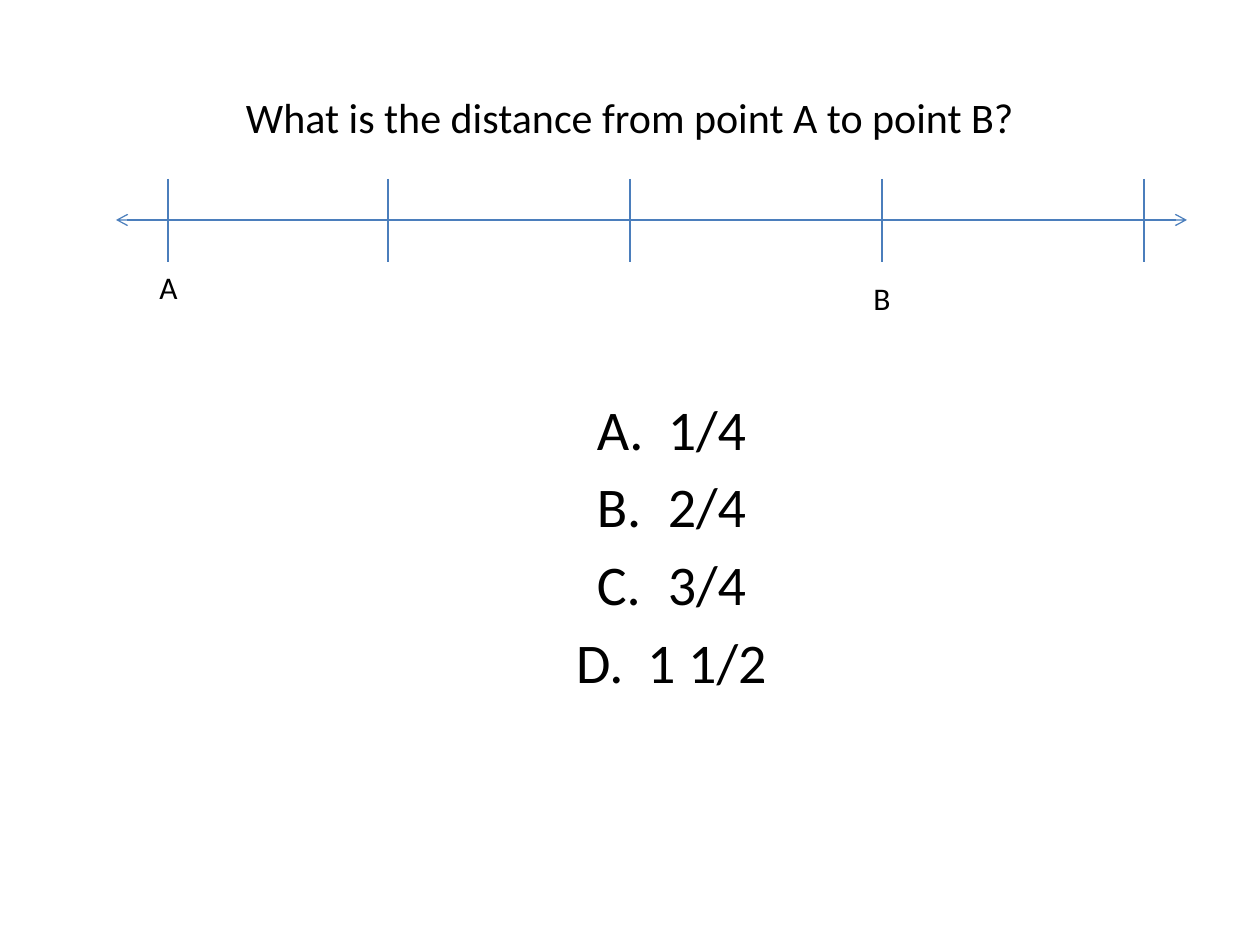
from dataclasses import dataclass

from lxml.etree import SubElement
from pptx import Presentation
from pptx.dml.color import RGBColor
from pptx.enum.shapes import MSO_CONNECTOR
from pptx.enum.text import MSO_ANCHOR as Anchor, PP_ALIGN as Align
from pptx.oxml.ns import qn
from pptx.util import Pt

PX = 914400 / 126


@dataclass(frozen=True)
class Theme:
    font: str = "Calibri"
    ink: RGBColor = RGBColor(0x00, 0x00, 0x00)
    rule: RGBColor = RGBColor(0x4B, 0x7E, 0xBC)
    rule_width: float = 0.75
    question: int = 24
    answer: int = 32
    label: int = 18


THEME = Theme()
TICKS = (168, 388, 630, 882, 1144)
TICK_TOP, AXIS_Y, TICK_BOTTOM = 179, 220, 262
AXIS_LEFT, AXIS_RIGHT = 116, 1187
ANSWERS = ("1/4", "2/4", "3/4", "1 1/2")
ANSWER_INDENT = 71


def px(length):
    return round(length * PX)


def style(paragraph, size):
    font = paragraph.font
    font.name, font.size = THEME.font, Pt(size)
    font.color.rgb = THEME.ink


def add_text(slide, box, lines, size, align=Align.LEFT, anchor=Anchor.TOP):
    frame = slide.shapes.add_textbox(*map(px, box)).text_frame
    frame.word_wrap = True
    frame.vertical_anchor = anchor
    frame.text = "\n".join(lines)
    for paragraph in frame.paragraphs:
        paragraph.alignment = align
        style(paragraph, size)
    return frame


def add_answers(slide, box):
    """Lettered choices, numbered A., B., C. by the paragraph itself."""
    frame = slide.shapes.add_textbox(*map(px, box)).text_frame
    frame.word_wrap = True
    frame.text = "\n".join(ANSWERS)
    for index, paragraph in enumerate(frame.paragraphs):
        paragraph.alignment = Align.CENTER
        if index:
            paragraph.space_before = Pt(6)
        properties = paragraph._p.get_or_add_pPr()
        properties.set("marL", str(px(ANSWER_INDENT)))
        properties.set("indent", str(-px(ANSWER_INDENT)))
        SubElement(properties, qn("a:buAutoNum"), type="alphaUcPeriod")
        style(paragraph, THEME.answer)


def add_rule(slide, start, end, arrows=False):
    rule = slide.shapes.add_connector(
        MSO_CONNECTOR.STRAIGHT, *map(px, (*start, *end)))
    rule.line.color.rgb = THEME.rule
    rule.line.width = Pt(THEME.rule_width)
    if arrows:
        outline = rule.line._get_or_add_ln()
        for tag in ("a:headEnd", "a:tailEnd"):
            SubElement(outline, qn(tag), type="arrow")
    SubElement(rule._element.spPr, qn("a:effectLst"))


def add_number_line(slide):
    add_rule(slide, (AXIS_LEFT, AXIS_Y), (AXIS_RIGHT, AXIS_Y), arrows=True)
    for x in TICKS:
        add_rule(slide, (x, TICK_TOP), (x, TICK_BOTTOM))
    for point, tick, top in (("A", 0, 262), ("B", 3, 273)):
        add_text(slide, (TICKS[tick] - 21, top, 53, 53), [point], THEME.label)


def main():
    deck = Presentation()
    deck.slide_width, deck.slide_height = px(1260), px(945)
    slide = deck.slides.add_slide(deck.slide_layouts[6])
    add_text(slide, (63, 38, 1134, 157),
             ["What is the distance from point A to point B?"],
             THEME.question, Align.CENTER, Anchor.MIDDLE)
    add_answers(slide, (451, 388, 441, 508))
    add_number_line(slide)
    deck.save("out.pptx")


if __name__ == "__main__":
    main()
